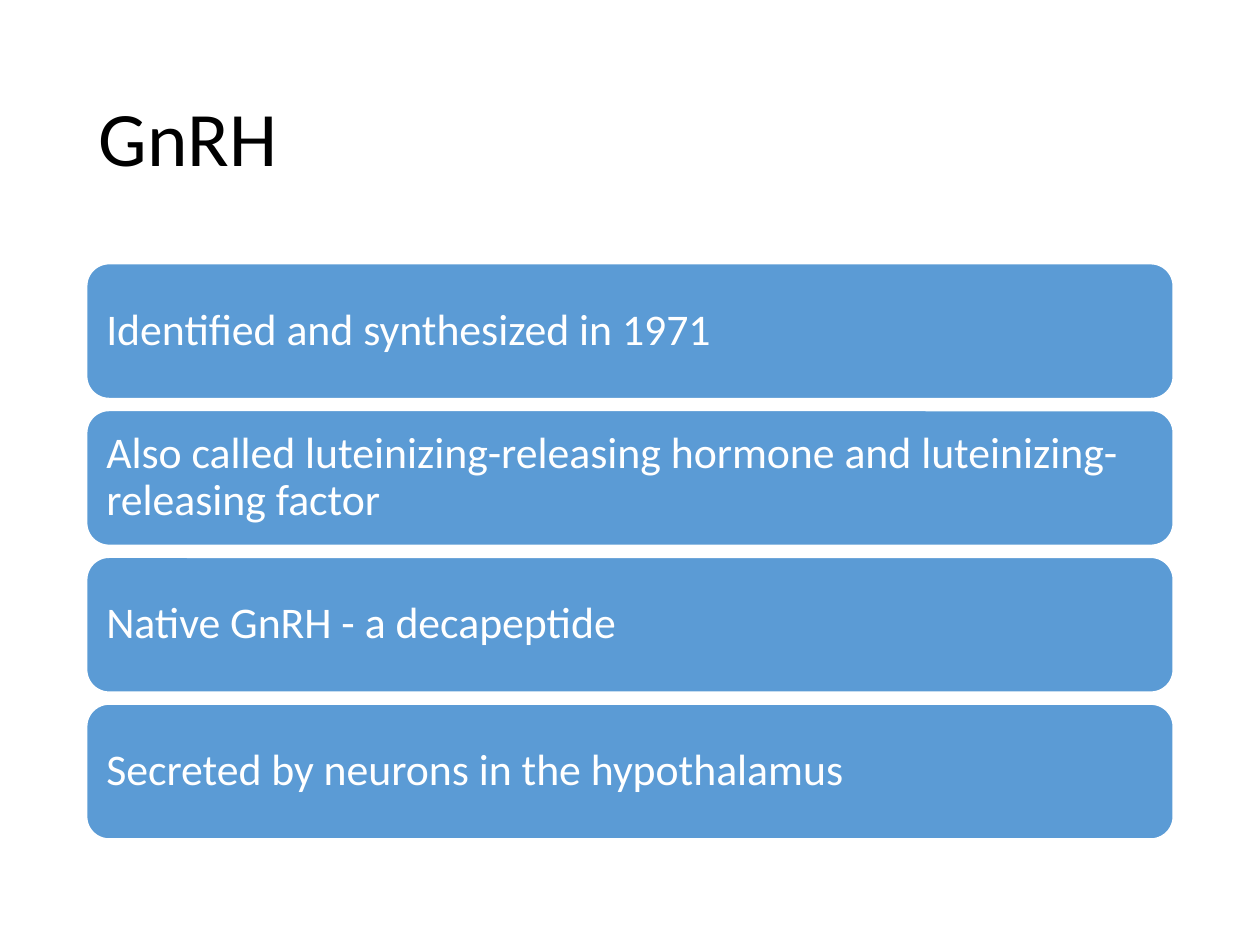
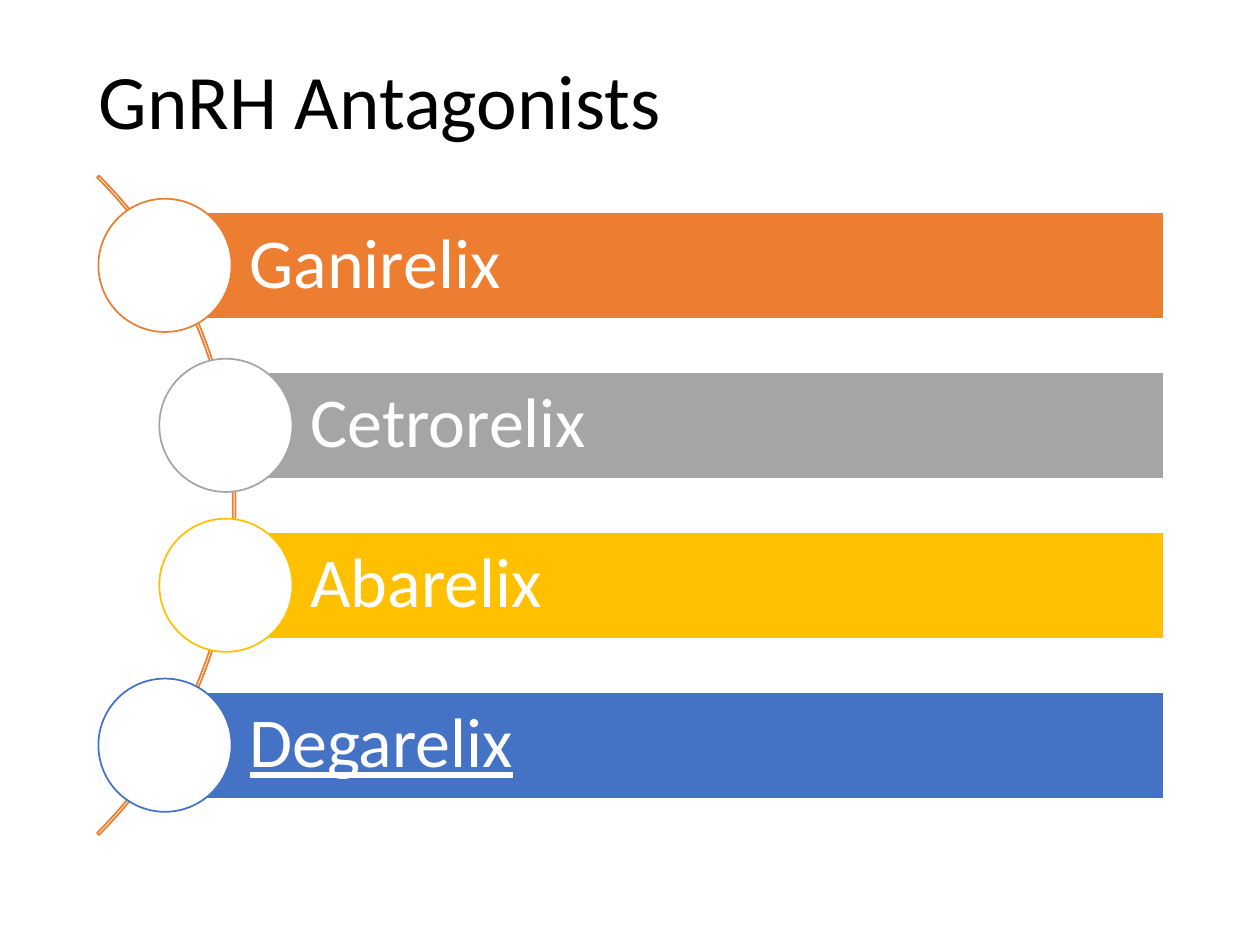
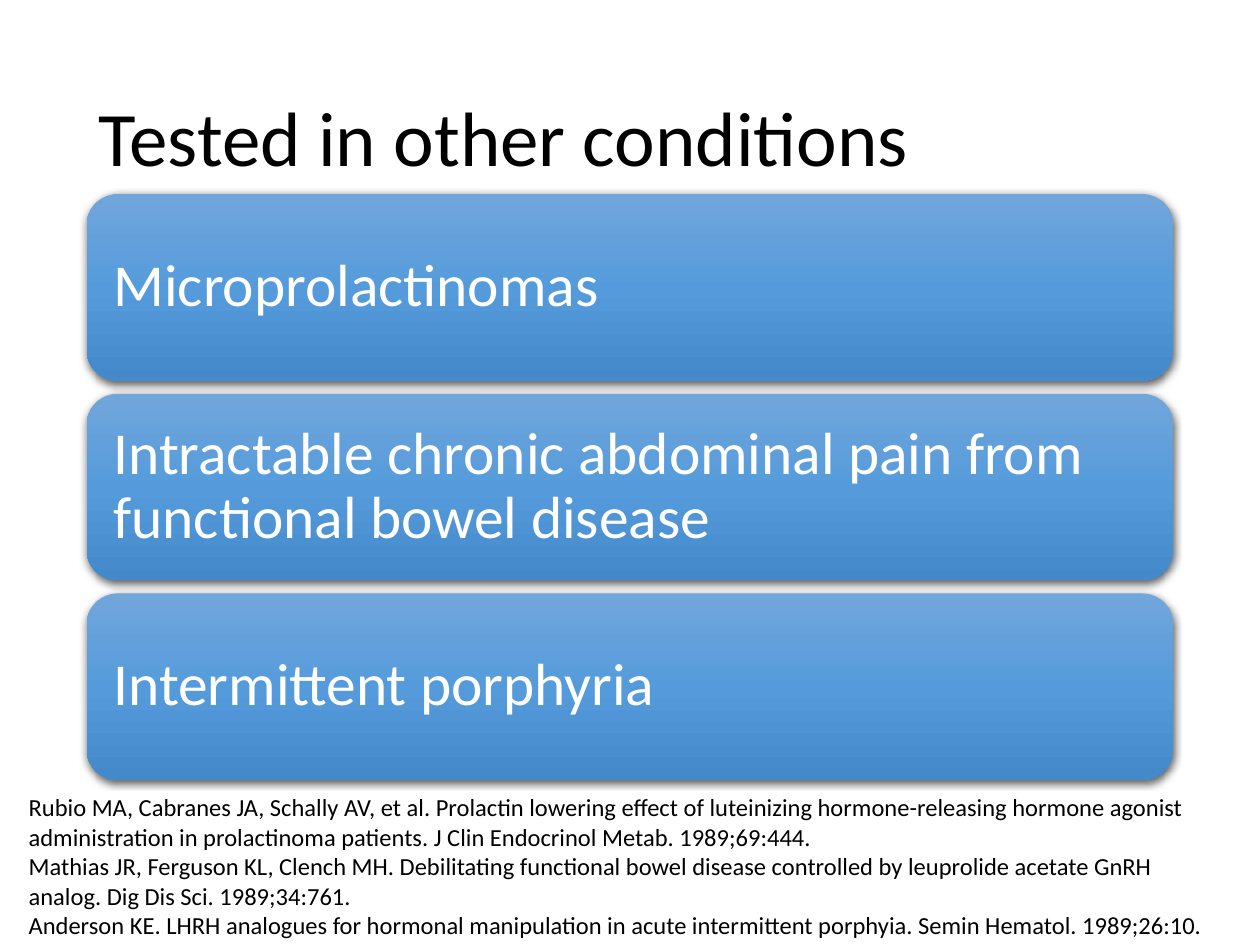
from pptx import Presentation
from pptx.dml.color import RGBColor
from pptx.enum.shapes import MSO_SHAPE as Preset
from pptx.enum.text import MSO_ANCHOR as Anchor, PP_ALIGN as Align
from pptx.oxml import parse_xml
from pptx.oxml.ns import nsdecls, qn
from pptx.util import Pt

FONT = "Calibri"
BLACK = RGBColor(0x00, 0x00, 0x00)
WHITE = RGBColor(0xFF, 0xFF, 0xFF)
BLUE = RGBColor(0x5B, 0x9B, 0xD5)
ORANGE = RGBColor(0xED, 0x7D, 0x31)
GRAY = RGBColor(0xA5, 0xA5, 0xA5)
GOLD = RGBColor(0xFF, 0xC0, 0x00)
ROYAL_BLUE = RGBColor(0x44, 0x72, 0xC4)
GLOSS = (
    (0, RGBColor(0x71, 0xA6, 0xDB)),
    (50, RGBColor(0x55, 0x9B, 0xDB)),
    (100, RGBColor(0x44, 0x8A, 0xCA)),
)

CONTENT_LEFT, CONTENT_WIDTH = 49.5, 621
TITLE_TOP = 28.75

FACTS = (
    "Identified and synthesized in 1971",
    "Also called luteinizing-releasing hormone and luteinizing-releasing factor",
    "Native GnRH - a decapeptide",
    "Secreted by neurons in the hypothalamus",
)
# Name, colour, distance from the left of the list
ANTAGONISTS = (
    ("Ganirelix", ORANGE, 0),
    ("Cetrorelix", GRAY, 34.8),
    ("Abarelix", GOLD, 34.8),
    ("Degarelix", ROYAL_BLUE, 0),
)
CONDITIONS = (
    "Microprolactinomas",
    "Intractable chronic abdominal pain from functional bowel disease",
    "Intermittent porphyria",
)
REFERENCES = (
    "Rubio MA, Cabranes JA, Schally AV, et al. Prolactin lowering effect of luteinizing "
    "hormone-releasing hormone agonist administration in prolactinoma patients. "
    "J Clin Endocrinol Metab. 1989;69:444.",
    "Mathias JR, Ferguson KL, Clench MH. Debilitating functional bowel disease controlled "
    "by leuprolide acetate GnRH analog. Dig Dis Sci. 1989;34:761.",
    "Anderson KE. LHRH analogues for hormonal manipulation in acute intermittent porphyia. "
    "Semin Hematol. 1989;26:10.",
)


def write(shape, text, size, color, anchor=Anchor.MIDDLE, spacing=0.9):
    text_frame = shape.text_frame
    text_frame.word_wrap = True
    text_frame.vertical_anchor = anchor
    text_frame.text = text
    for paragraph in text_frame.paragraphs:
        paragraph.alignment = Align.LEFT
        paragraph.line_spacing = spacing
        for run in paragraph.runs:
            run.font.name = FONT
            run.font.size = Pt(size)
            run.font.color.rgb = color


def set_insets(shape, left, others):
    text_frame = shape.text_frame
    text_frame.margin_left = Pt(left)
    text_frame.margin_top = text_frame.margin_right = text_frame.margin_bottom = Pt(others)


def add_preset(slide, preset, left, top, width, height, fill=None, line=None):
    shape = slide.shapes.add_shape(preset, Pt(left), Pt(top), Pt(width), Pt(height))
    shape.shadow.inherit = False
    if fill is None:
        shape.fill.background()
    else:
        shape.fill.solid()
        shape.fill.fore_color.rgb = fill
    if line is None:
        shape.line.fill.background()
    else:
        shape.line.color.rgb = line
        shape.line.width = Pt(1)
    return shape


def add_text(slide, left, top, width, height, *args, **kwargs):
    box = slide.shapes.add_textbox(Pt(left), Pt(top), Pt(width), Pt(height))
    write(box, *args, **kwargs)


def add_titled_slide(presentation, title, title_height):
    slide = presentation.slides.add_slide(presentation.slide_layouts[6])
    add_text(slide, CONTENT_LEFT, TITLE_TOP, CONTENT_WIDTH, title_height, title, 44, BLACK)
    return slide


def add_gloss(shape):
    """Give the shape a vertical gradient and a soft shadow below."""
    stops = "".join(
        f'<a:gs pos="{position * 1000}"><a:srgbClr val="{color}"/></a:gs>'
        for position, color in GLOSS
    )
    gradient = parse_xml(
        f'<a:gradFill {nsdecls("a")} rotWithShape="1"><a:gsLst>{stops}</a:gsLst>'
        '<a:lin ang="5400000" scaled="0"/></a:gradFill>'
    )
    shadow = parse_xml(
        f'<a:outerShdw {nsdecls("a")} blurRad="{Pt(4.5)}" dist="{Pt(1.5)}" dir="5400000" '
        'algn="ctr" rotWithShape="0"><a:srgbClr val="000000"><a:alpha val="63000"/>'
        "</a:srgbClr></a:outerShdw>"
    )
    properties = shape.element.spPr
    properties.find(qn("a:prstGeom")).addnext(gradient)
    properties.find(qn("a:effectLst")).append(shadow)


def add_card_list(slide, texts, top, card_height, gap, size, glossy=False):
    for index, text in enumerate(texts):
        card = add_preset(
            slide, Preset.ROUNDED_RECTANGLE,
            CONTENT_LEFT, top + index * (card_height + gap), CONTENT_WIDTH, card_height,
            fill=None if glossy else BLUE, line=None if glossy else WHITE,
        )
        if glossy:
            properties = card.element.spPr
            properties.remove(properties.find(qn("a:noFill")))
            add_gloss(card)
        write(card, text, size, WHITE)
        set_insets(card, 0.3 * size, 0.3 * size)


def add_arc_list(slide, items, left, top, right, bar_height, pitch):
    """Place bars whose round heads follow an arc; left is the first bar's edge."""
    head = 1.25 * bar_height
    arc_size = 532.8
    middle = top + ((len(items) - 1) * pitch + bar_height) / 2
    arc = add_preset(
        slide, Preset.BLOCK_ARC, left - 492.5, middle - arc_size / 2,
        arc_size, arc_size, line=ORANGE,
    )
    for index, value in enumerate((189, 27, 0.0029)):
        arc.adjustments[index] = value

    for index, (name, color, indent) in enumerate(items):
        bar_left, bar_top = left + indent, top + index * pitch
        bar = add_preset(
            slide, Preset.RECTANGLE, bar_left, bar_top, right - bar_left, bar_height,
            fill=color, line=WHITE,
        )
        write(bar, name, 40, WHITE)
        set_insets(bar, 48.3, 8)
        bar.text_frame.paragraphs[0].runs[0].font.underline = name == "Degarelix"
        add_preset(
            slide, Preset.OVAL, bar_left - head / 2, bar_top + (bar_height - head) / 2,
            head, head, fill=WHITE, line=color,
        )


def main():
    presentation = Presentation()
    presentation.slide_width, presentation.slide_height = Pt(720), Pt(540)

    slide = add_titled_slide(presentation, "GnRH", 104.4)
    add_card_list(slide, FACTS, top=150.6, card_height=77.2, gap=6.7, size=25)

    slide = add_titled_slide(presentation, "GnRH Antagonists", 61.9)
    add_arc_list(slide, ANTAGONISTS, left=94.3, top=121.2, right=665, bar_height=60.9, pitch=91.4)

    slide = add_titled_slide(presentation, "Tested in other conditions", 104.4)
    add_card_list(slide, CONDITIONS, top=110.9, card_height=106.6, gap=7.5, size=34, glossy=True)
    add_text(
        slide, 9.3, 449.3, 695, 90.7, "\n".join(REFERENCES), 14, BLACK,
        anchor=Anchor.TOP, spacing=1,
    )

    presentation.save("out.pptx")


if __name__ == "__main__":
    main()
